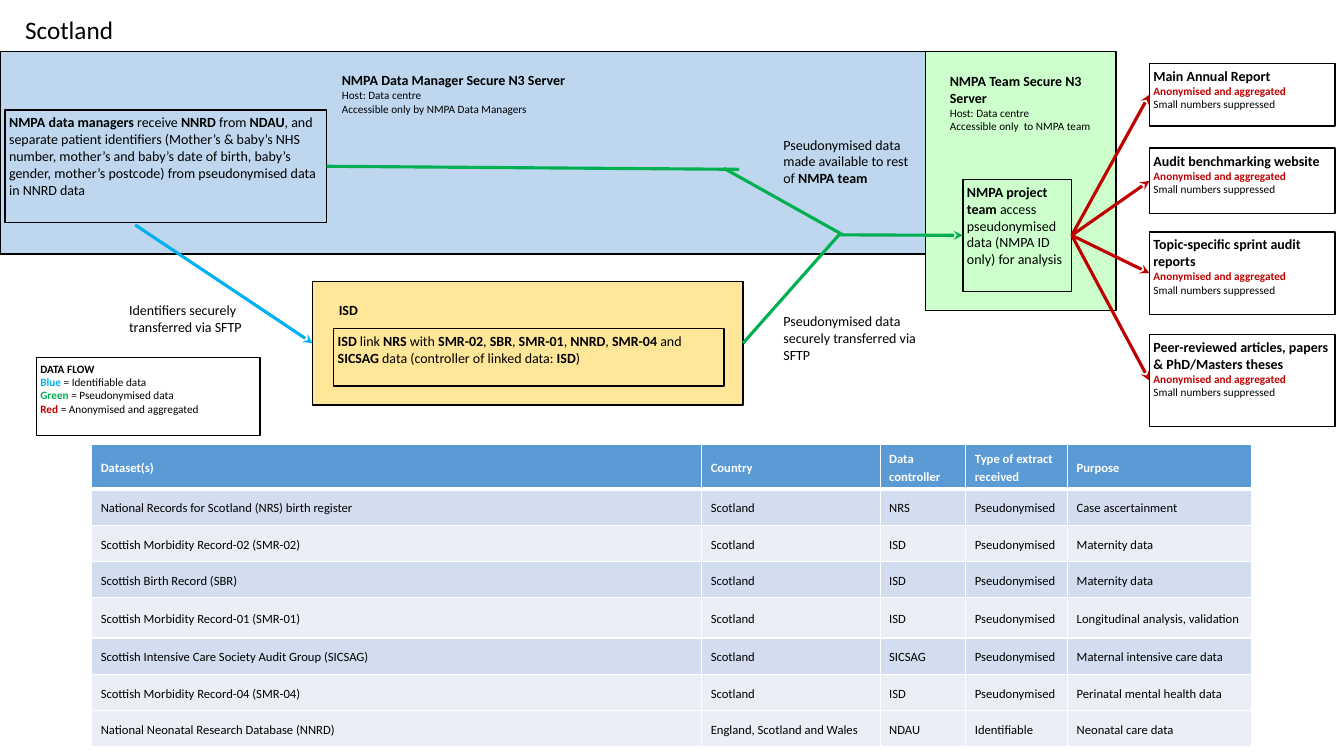
from lxml import etree
from pptx import Presentation
from pptx.dml.color import RGBColor
from pptx.enum.shapes import MSO_CONNECTOR, MSO_SHAPE
from pptx.enum.text import MSO_ANCHOR, PP_ALIGN
from pptx.oxml.ns import qn
from pptx.util import Inches, Pt

STRAIGHT = MSO_CONNECTOR.STRAIGHT
RECT = MSO_SHAPE.RECTANGLE
TOP, MIDDLE, LEFT = MSO_ANCHOR.TOP, MSO_ANCHOR.MIDDLE, PP_ALIGN.LEFT
LEFT_SIDE, RIGHT_SIDE = 1, 3

BLACK = RGBColor(0x00, 0x00, 0x00)
WHITE = RGBColor(0xFF, 0xFF, 0xFF)
BLUE = RGBColor(0x00, 0xB0, 0xF0)
GREEN = RGBColor(0x00, 0xB0, 0x50)
RED = RGBColor(0xC0, 0x00, 0x00)
PALE_BLUE = RGBColor(0xBE, 0xD7, 0xEF)
PALE_GREEN = RGBColor(0xCC, 0xFF, 0xCC)
PALE_YELLOW = RGBColor(0xFF, 0xE6, 0x99)
HEADER_BLUE = RGBColor(0x5B, 0x9B, 0xD5)
BAND_DARK = RGBColor(0xD2, 0xDE, 0xEF)
BAND_LIGHT = RGBColor(0xEA, 0xEF, 0xF7)

HOST = "Host: Data centre"
REPORTS = [
    ("Main Annual Report", 0, 0.62),
    ("Audit benchmarking website", 0.84, 0.65),
    ("Topic-specific sprint audit reports", 1.67, 0.82),
    ("Peer-reviewed articles, papers & PhD/Masters theses", 2.69, 0.91),
]
COLUMN_WIDTHS = [6.05, 1.77, 0.85, 1.01, 1.82]
ROW_HEIGHTS = [0.44, 0.36, 0.36, 0.36, 0.4, 0.36, 0.36, 0.36]
DATASETS = [
    ("Dataset(s)", "Country", "Data controller", "Type of extract received", "Purpose"),
    ("National Records for Scotland (NRS) birth register", "Scotland", "NRS",
     "Pseudonymised", "Case ascertainment"),
    ("Scottish Morbidity Record-02 (SMR-02)", "Scotland", "ISD",
     "Pseudonymised", "Maternity data"),
    ("Scottish Birth Record (SBR)", "Scotland", "ISD",
     "Pseudonymised", "Maternity data"),
    ("Scottish Morbidity Record-01 (SMR-01)", "Scotland", "ISD",
     "Pseudonymised", "Longitudinal analysis, validation"),
    ("Scottish Intensive Care Society Audit Group (SICSAG)", "Scotland", "SICSAG",
     "Pseudonymised", "Maternal intensive care data"),
    ("Scottish Morbidity Record-04 (SMR-04)", "Scotland", "ISD",
     "Pseudonymised", "Perinatal mental health data"),
    ("National Neonatal Research Database (NNRD)", "England, Scotland and Wales", "NDAU",
     "Identifiable", "Neonatal care data"),
]


def write(p, text, size=10, color=BLACK, strong=None):
    for i, part in enumerate(text.split("**")):
        if part:
            r = p.add_run()
            r.text = part
            r.font.name, r.font.size, r.font.bold = "Calibri", Pt(size), i % 2 == 1
            r.font.color.rgb = strong if strong and i % 2 else color


def fill_frame(tf, paragraphs, inset=(0.04, 0.04)):
    tf.word_wrap = True
    tf.vertical_anchor = TOP
    tf.margin_left = tf.margin_right = Inches(inset[0])
    tf.margin_top = tf.margin_bottom = Inches(inset[1])
    for i, (text, style) in enumerate(paragraphs):
        p = tf.add_paragraph() if i else tf.paragraphs[0]
        p.alignment = LEFT
        write(p, text, **style)


def add_label(s, x, y, w, h, *paragraphs, **frame):
    sp = s.shapes.add_textbox(Inches(x), Inches(y), Inches(w), Inches(h))
    fill_frame(sp.text_frame, paragraphs, **frame)


def add_box(s, x, y, w, h, *paragraphs, fill=None):
    sp = s.shapes.add_shape(RECT, Inches(x), Inches(y), Inches(w), Inches(h))
    sp.shadow.inherit = False
    if fill is None:
        sp.fill.background()
    else:
        sp.fill.solid()
        sp.fill.fore_color.rgb = fill
    sp.line.color.rgb = BLACK
    sp.line.width = Pt(1)
    fill_frame(sp.text_frame, paragraphs)
    return sp


def add_flow(s, start, end, color, arrow=False, source=None, target=None):
    c = s.shapes.add_connector(STRAIGHT, *[Inches(v) for v in (*start, *end)])
    if source is not None:
        c.begin_connect(source, RIGHT_SIDE)
    if target is not None:
        c.end_connect(target, LEFT_SIDE)
    c.line.color.rgb = color
    c.line.width = Pt(2.25)
    if arrow:
        etree.SubElement(c.line._get_or_add_ln(), qn("a:tailEnd"), type="stealth")
    etree.SubElement(c._element.spPr, qn("a:effectLst"))


def server_title(name, access):
    return [(f"**{name}**", {}), (HOST, {"size": 8}), (access, {"size": 8})]


def add_manager_server(s, x, y, w, h):
    add_box(s, x, y, w, h, fill=PALE_BLUE)
    managers = add_box(s, x + 0.05, y + 0.58, 3.19, 1.12, (
        "**NMPA data managers **receive **NNRD** from **NDAU**, and separate patient "
        "identifiers (Mother’s & baby’s NHS number, mother’s and baby’s date of birth, "
        "baby’s gender, mother’s postcode) from pseudonymised data in NNRD data", {}))
    add_label(s, x + 3.35, y + 0.16, 2.39, 0.55, *server_title(
        "NMPA Data Manager Secure N3 Server", "Accessible only by NMPA Data Managers"))
    add_label(s, x + 7.73, y + 0.8, 1.4, 1, (
        "Pseudonymised data made available to rest of **NMPA team**", {}))
    return managers


def add_team_server(s, x, y, w, h):
    add_box(s, x, y, w, h, fill=PALE_GREEN)
    add_label(s, x + 0.2, y + 0.17, 1.49, 1, *server_title(
        "NMPA Team Secure N3 Server", "Accessible only  to NMPA team"))
    return add_box(s, x + 0.37, y + 1.27, 1.08, 1.11, (
        "**NMPA project team **access pseudonymised data (NMPA ID only) for analysis", {}))


def add_reports(s, x, y, w):
    return [add_box(s, x, y + dy, w, h, (f"**{name}**", {}),
                    ("**Anonymised and aggregated**", {"size": 8, "color": RED}),
                    ("Small numbers suppressed", {"size": 8}))
            for name, dy, h in REPORTS]


def add_isd(s, x, y, w, h):
    isd = add_box(s, x, y, w, h, fill=PALE_YELLOW)
    add_label(s, x + 0.22, y + 0.16, 2.39, 0.27, ("**ISD**", {}))
    add_box(s, x + 0.21, y + 0.47, w - 0.4, 0.57, (
        "**ISD** link **NRS** with **SMR-02**, **SBR**, **SMR-01**, **NNRD**, **SMR-04** "
        "and **SICSAG** data (controller of linked data: **ISD**)", {}))
    return isd


def add_legend(s, x, y, w, h):
    add_box(s, x, y, w, h, ("**DATA FLOW**", {"size": 8}),
            ("**Blue** = Identifiable data", {"size": 8, "strong": BLUE}),
            ("**Green **= Pseudonymised data", {"size": 8, "strong": GREEN}),
            ("**Red **= Anonymised and aggregated", {"size": 8, "strong": RED}))


def add_flows(s, managers, team, isd, reports):
    add_flow(s, (1.34, 2.23), (3.1, 3.39), BLUE, arrow=True, target=isd)
    add_flow(s, (8.32, 2.33), (9.6, 2.32), GREEN, arrow=True, target=team)
    add_flow(s, (7.39, 3.41), (8.33, 2.32), GREEN, source=isd)
    add_flow(s, (7.18, 1.67), (8.36, 2.33), GREEN)
    add_flow(s, (3.24, 1.65), (7.33, 1.68), GREEN, source=managers)
    for report in reports:
        add_flow(s, (10.63, 2.33), (11.4, 2.33), RED, arrow=True, source=team, target=report)
    add_label(s, 1.24, 2.95, 1.46, 0.51, ("Identifiers securely transferred via SFTP", {}))
    add_label(s, 7.73, 3.06, 1.46, 0.69,
              ("Pseudonymised data securely transferred via SFTP", {}))


def set_borders(cell, **widths):
    tcPr = cell._tc.get_or_add_tcPr()
    for side in "LRTB":
        ln = etree.SubElement(tcPr, qn(f"a:ln{side}"), w=str(Pt(widths.get(side, 1))))
        fill = etree.SubElement(ln, qn("a:solidFill"))
        etree.SubElement(fill, qn("a:srgbClr"), val=str(WHITE))


def add_datasets(s, x, y, w, h):
    table = s.shapes.add_table(len(DATASETS), len(COLUMN_WIDTHS), Inches(x), Inches(y),
                               Inches(w), Inches(h)).table
    for column, width in zip(table.columns, COLUMN_WIDTHS):
        column.width = Inches(width)
    for i, (row, height, values) in enumerate(zip(table.rows, ROW_HEIGHTS, DATASETS)):
        row.height = Inches(height)
        header, last = i == 0, i == len(DATASETS) - 1
        band = BAND_DARK if i % 2 and not last else BAND_LIGHT
        for cell, value in zip(row.cells, values):
            text = f"**{value}**" if header else value
            style = {"size": 9, "color": WHITE if header else BLACK}
            fill_frame(cell.text_frame, [(text, style)])
            cell.text_frame.paragraphs[0].line_spacing = 1.19
            cell.vertical_anchor = MIDDLE
            cell.margin_left = cell.margin_right = Inches(0.09)
            cell.margin_top = cell.margin_bottom = Inches(0.04)
            set_borders(cell, T=3 if i == 1 else 1, B=3 if header else 1)
            cell.fill.solid()
            cell.fill.fore_color.rgb = HEADER_BLUE if header else band


def main():
    prs = Presentation()
    prs.slide_width, prs.slide_height = Inches(13.33), Inches(7.5)
    s = prs.slides.add_slide(prs.slide_layouts[6])
    add_label(s, 0.15, 0.09, 3.26, 0.4, ("Scotland", {"size": 18}), inset=(0.1, 0.05))
    team = add_team_server(s, 9.18, 0.51, 1.89, 2.57)
    managers = add_manager_server(s, 0, 0.51, 9.18, 2.01)
    reports = add_reports(s, 11.4, 0.63, 1.84)
    isd = add_isd(s, 3.1, 2.79, 4.27, 1.23)
    add_legend(s, 0.36, 3.55, 2.22, 0.77)
    add_flows(s, managers, team, isd, reports)
    add_datasets(s, 0.91, 4.41, 11.5, 2.99)
    prs.save("out.pptx")


if __name__ == "__main__":
    main()
